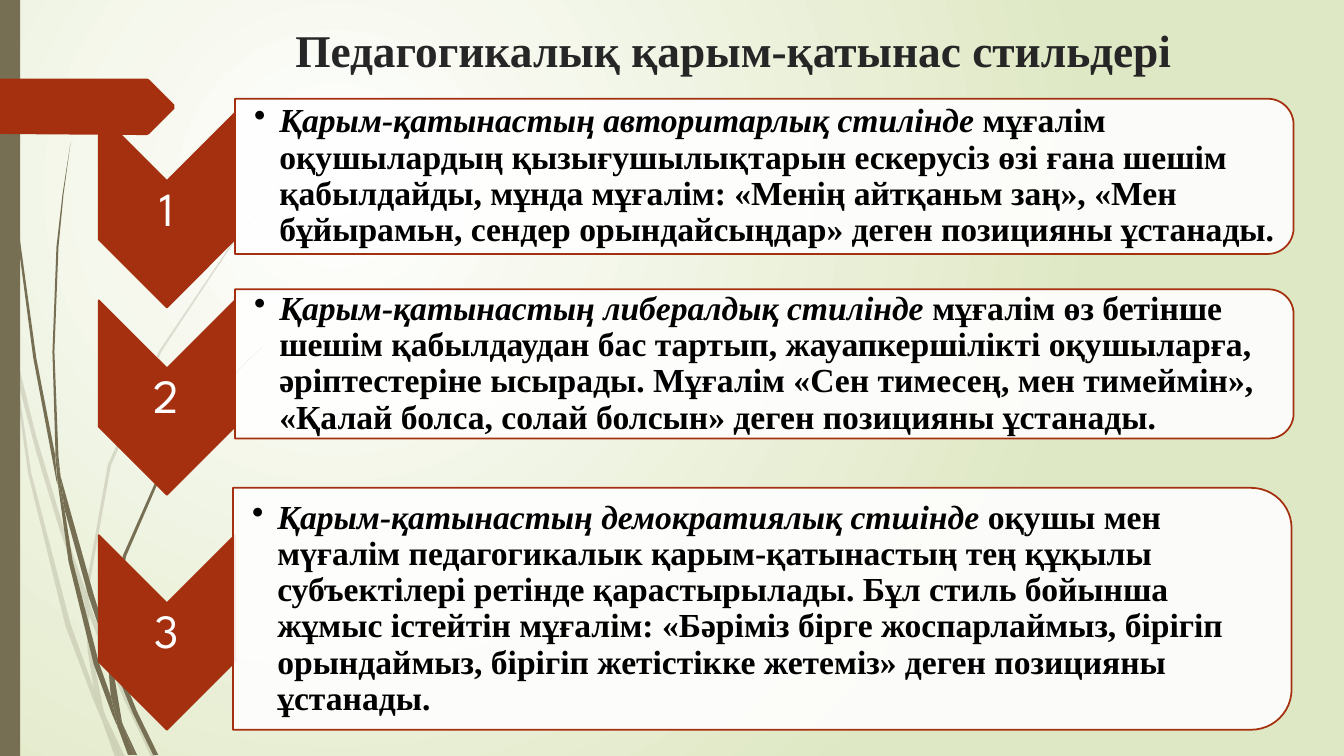
"""Build the slide on styles of pedagogical communication."""
from dataclasses import dataclass

from lxml import etree
from pptx import Presentation, util as u
from pptx.dml.color import RGBColor
from pptx.enum import shapes, text
from pptx.oxml.ns import qn

EMU_PER_PX = 9144
Points = tuple[tuple[int, int], ...]


@dataclass(frozen=True)
class Theme:
    accent: str = "A53010"
    grass: str = "766F54"
    white: str = "FFFFFF"
    meadow: str = "DFE8C4"
    title_color: str = "262626"
    body_color: str = "000000"
    serif: str = "Times New Roman"
    sans: str = "League Spartan"
    title_size: float = 32.4
    number_size: float = 34
    body_size: float = 24
    outline: float = 1.25
    grass_alpha: int = 20
    card_alpha: int = 90


@dataclass(frozen=True)
class Box:
    left: int
    top: int
    width: int
    height: int

    def emu(self) -> tuple[int, ...]:
        return tuple(px(n) for n in (self.left, self.top, self.width, self.height))

    def quarter_turned(self) -> "Box":
        shift = (self.width - self.height) // 2
        return Box(self.left + shift, self.top - shift, self.height, self.width)


@dataclass(frozen=True)
class Style:
    number: str
    chevron_top: int
    card: Box
    name: str
    description: str


THEME = Theme()
STYLES = (
    Style("1", 112, Box(233, 98, 1050, 154), "Қарым-қатынастың авторитарлық стилінде ",
          "мұғалім оқушылардың қызығушылықтарын ескерусіз өзі ғана шешім қабылдайды, "
          "мұнда мұғалім: «Менің айтқаньм заң», «Мен бұйырамьн, сендер орындайсыңдар» "
          "деген позицияны ұстанады."),
    Style("2", 298, Box(233, 287, 1050, 148), "Қарым-қатынастың либералдық стилінде ",
          "мұғалім өз бетінше шешім қабылдаудан бас тартып, жауапкершілікті оқушыларға, "
          "әріптестеріне ысырады. Мұғалім «Сен тимесең, мен тимеймін», «Қалай болса, "
          "солай болсын» деген позицияны ұстанады."),
    Style("3", 531, Box(231, 484, 1050, 240), "Қарым-қатынастың демократиялық стшінде ",
          "оқушы мен мүғалім педагогикалык қарым-қатынастың тең құқылы субъектілері "
          "ретінде қарастырылады. Бұл стиль бойынша жұмыс істейтін мұғалім: «Бәріміз "
          "бірге жоспарлаймыз, бірігіп орындаймыз, бірігіп жетістікке жетеміз» деген "
          "позицияны ұстанады."),
)
PALE_BLADES: tuple[Points, ...] = (
    ((11, 350), (9, 322), (0, 282), (0, 299), (10, 344)),
    ((58, 522), (84, 599), (85, 586), (62, 520), (36, 433), (14, 345), (17, 376), (36, 449)),
    ((92, 607), (88, 596), (88, 610), (123, 694), (150, 751), (155, 751), (127, 692)),
    ((119, 751), (124, 751), (105, 711)),
    ((93, 683), (70, 619), (31, 469), (17, 376), (11, 350), (28, 470), (65, 621),
     (92, 693), (101, 714), (99, 707)),
    ((84, 599), (87, 646), (93, 683), (96, 692), (105, 711), (103, 706), (91, 646),
     (88, 610), (88, 608)),
    ((88, 584), (110, 462), (160, 349), (229, 245), (268, 198), (290, 175), (312, 154),
     (312, 153), (289, 175), (268, 197), (228, 244), (158, 348), (107, 461), (85, 584),
     (85, 586), (88, 596)),
    ((101, 714), (114, 751), (119, 751)),
    ((88, 608), (88, 610), (88, 596), (85, 586), (84, 599)),
    ((96, 692), (93, 683), (99, 707), (101, 714), (119, 751), (105, 711)),
)
DARK_BLADES: tuple[Points, ...] = (
    ((7, 110), (17, 233), (33, 355), (56, 477), (57, 481), (55, 457), (55, 453), (36, 355),
     (19, 232), (8, 109), (5, 48), (4, 0), (3, 0), (4, 48)),
    ((88, 592), (106, 645), (106, 633), (106, 631), (93, 590), (60, 472), (64, 505)),
    ((113, 649), (110, 641), (111, 656), (132, 708), (152, 749), (157, 749), (136, 706)),
    ((110, 691), (98, 657), (72, 556), (64, 505), (57, 477), (68, 557), (93, 659),
     (111, 708), (117, 722), (116, 717)),
    ((60, 472), (58, 453), (54, 349), (58, 245), (63, 193), (70, 141), (62, 193),
     (56, 245), (52, 349), (55, 449)),
    ((133, 749), (136, 749), (122, 719)),
    ((57, 477), (64, 505), (60, 472), (55, 449), (55, 453)),
    ((111, 633), (125, 552), (158, 476), (205, 406), (231, 374), (245, 359), (261, 344),
     (260, 344), (245, 358), (231, 373), (204, 405), (156, 474), (122, 551), (106, 631),
     (110, 641)),
    ((117, 722), (127, 749), (131, 749)),
    ((106, 645), (110, 691), (116, 706), (122, 719), (121, 716), (111, 656), (109, 651)),
    ((106, 645), (109, 651), (111, 656), (110, 641), (106, 631), (106, 633)),
    ((116, 706), (110, 691), (116, 717), (117, 722), (130, 749), (133, 749), (122, 719)),
)
ARROW_TAG: Points = ((173, 108), (148, 133), (146, 134), (136, 134), (0, 133), (0, 78),
                     (146, 78), (148, 79), (173, 104))


def px(length: int) -> int:
    return length * EMU_PER_PX


def paint(shape, color: str, alpha: int = 100, line: str | None = None) -> None:
    shape.shadow.inherit = False
    shape.fill.solid()
    shape.fill.fore_color.rgb = RGBColor.from_string(color)
    if alpha < 100:
        srgb = shape._element.spPr.find(qn("a:solidFill")).find(qn("a:srgbClr"))
        etree.SubElement(srgb, qn("a:alpha"), val=str(alpha * 1000))
    if line:
        shape.line.color.rgb = RGBColor.from_string(line)
        shape.line.width = u.Pt(THEME.outline)
    else:
        shape.line.fill.background()


def add_outline(slide, points: Points, color: str, alpha: int = 100) -> None:
    builder = slide.shapes.build_freeform(*points[0], scale=EMU_PER_PX)
    builder.add_line_segments(points[1:], close=True)
    paint(builder.convert_to_shape(), color, alpha)


def add_turned(slide, kind: shapes.MSO_SHAPE, box: Box, color: str, alpha: int = 100) -> None:
    shape = slide.shapes.add_shape(kind, *box.quarter_turned().emu())
    shape.rotation = 90
    paint(shape, color, alpha, THEME.accent)


def add_text(slide, box: Box, font_name: str, size: float, color: str, bold: bool,
             margins: tuple[int, int, int, int] = (10, 5, 10, 5),
             anchor: text.MSO_ANCHOR = text.MSO_ANCHOR.MIDDLE):
    frame = slide.shapes.add_textbox(*box.emu()).text_frame
    frame.word_wrap = True
    frame.vertical_anchor = anchor
    (frame.margin_left, frame.margin_top,
     frame.margin_right, frame.margin_bottom) = map(px, margins)
    paragraph = frame.paragraphs[0]
    paragraph.font.name = font_name
    paragraph.font.size = u.Pt(size)
    paragraph.font.bold = bold
    paragraph.font.color.rgb = RGBColor.from_string(color)
    return paragraph


def add_bullet(paragraph, indent: int) -> None:
    properties = paragraph._p.get_or_add_pPr()
    properties.set("marL", str(px(indent)))
    properties.set("indent", str(-px(indent)))
    bullet = etree.Element(qn("a:buChar"), char="•")
    properties.find(qn("a:defRPr")).addprevious(bullet)


def add_style(slide, style: Style) -> None:
    chevron = Box(98, style.chevron_top, 135, 193)
    add_turned(slide, shapes.MSO_SHAPE.CHEVRON, chevron, THEME.accent)
    number = add_text(slide, Box(chevron.left, chevron.top + 68, chevron.width, 58),
                      THEME.sans, THEME.number_size, THEME.white, False, (2, 2, 2, 2))
    number.alignment = text.PP_ALIGN.CENTER
    number.line_spacing = 0.9
    number.add_run().text = style.number

    card = style.card
    add_turned(slide, shapes.MSO_SHAPE.ROUND_2_SAME_RECTANGLE, card, THEME.white,
               THEME.card_alpha)
    inset = round(card.height * 0.05)
    body = add_text(slide, Box(card.left, card.top + inset, card.width - inset,
                               card.height - 2 * inset),
                    THEME.serif, THEME.body_size, THEME.body_color, True, (19, 2, 2, 2))
    body.line_spacing = 0.9
    add_bullet(body, 25)
    for content, italic in ((style.name, True), (style.description, False)):
        run = body.add_run()
        run.text = content
        run.font.italic = italic


def set_background(slide) -> None:
    fill = slide.background.fill
    fill.gradient()
    for stop, color in zip(fill.gradient_stops, (THEME.white, THEME.meadow)):
        stop.color.rgb = RGBColor.from_string(color)
    gradient = slide.background._cSld.find(".//" + qn("a:gradFill"))
    linear = gradient.find(qn("a:lin"))
    radial = etree.Element(qn("a:path"), {"path": "circle"})
    etree.SubElement(radial, qn("a:fillToRect"), l="50000", t="50000", r="100000", b="100000")
    gradient.replace(linear, radial)


def main() -> None:
    presentation = Presentation()
    presentation.slide_width, presentation.slide_height = px(1333), px(750)
    slide = presentation.slides.add_slide(presentation.slide_layouts[6])
    set_background(slide)
    for blade in PALE_BLADES:
        add_outline(slide, blade, THEME.grass, THEME.grass_alpha)
    for blade in DARK_BLADES:
        add_outline(slide, blade, THEME.grass)
    stripe = slide.shapes.add_shape(shapes.MSO_SHAPE.RECTANGLE, *Box(0, 0, 20, 750).emu())
    paint(stripe, THEME.grass)
    add_outline(slide, ARROW_TAG, THEME.accent)
    title = add_text(slide, Box(283, 17, 975, 92), THEME.serif, THEME.title_size,
                     THEME.title_color, True, anchor=text.MSO_ANCHOR.TOP)
    title.add_run().text = "Педагогикалық қарым-қатынас стильдері"
    for style in STYLES:
        add_style(slide, style)
    presentation.save("out.pptx")


if __name__ == "__main__":
    main()
